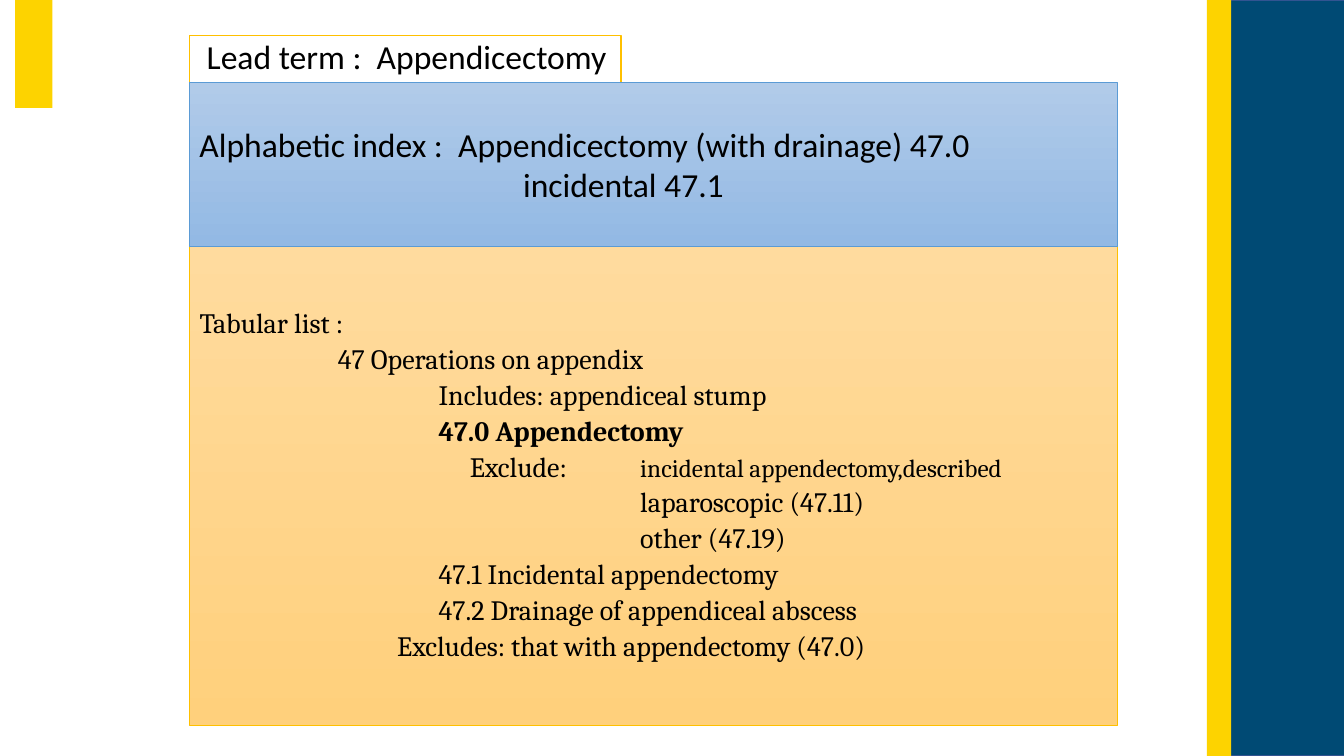
from pptx import Presentation
from pptx.dml.color import RGBColor
from pptx.enum.shapes import MSO_SHAPE
from pptx.enum.text import MSO_ANCHOR, MSO_AUTO_SIZE, PP_ALIGN
from pptx.util import Inches, Pt

RECT = MSO_SHAPE.RECTANGLE
MIDDLE = MSO_ANCHOR.MIDDLE
NO_FIT = MSO_AUTO_SIZE.NONE
LEFT = PP_ALIGN.LEFT

# Content: each line is (left indent in inches, runs); a run is (text, format)
LEAD_TERM = [(0, [("Lead term :  Appendicectomy", {})])]
INDEX = [
    (0, [("Alphabetic index :  Appendicectomy (with drainage) 47.0", {})]),
    (3.21, [("incidental 47.1", {})]),
]
CODE, EXCLUDE, EXCLUDED = 2.37, 2.68, 4.37
TABULAR = [
    (0, [("Tabular list :", {})]),
    (1.37, [("47 Operations on appendix", {})]),
    (CODE, [("Includes: appendiceal stump", {})]),
    (CODE, [("47.0 Appendectomy", {"bold": True})]),
    (EXCLUDE, [("Exclude:\t", {}),
               ("incidental appendectomy,described", {"size": 18})]),
    (EXCLUDED, [("laparoscopic (47.11)", {})]),
    (EXCLUDED, [("other (47.19)", {})]),
    (CODE, [("47.1 Incidental appendectomy", {})]),
    (CODE, [("47.2 Drainage of appendiceal abscess", {})]),
    (1.96, [("Excludes: that with appendectomy (47.0)", {})]),
]

# Bars: left, top, width, height, fill, line
BARS = [
    (0.15, -0.03, 0.37, 1.1, "FDD300", None),
    (12.18, 0, 1.21, 7.5, "004A74", "325491"),
    (11.97, -0.01, 0.24, 7.53, "FDD300", None),
]
PANEL_LEFT, PANEL_WIDTH = 1.88, 9.2
LEAD_TOP, INDEX_TOP, TABULAR_TOP, BOTTOM = 0.35, 0.82, 2.44, 7.2


def rgb(value):
    return RGBColor.from_string(value)


def place(sp, left, top, width, height):
    sp.left, sp.top = Inches(left), Inches(top)
    sp.width, sp.height = Inches(width), Inches(height)


def paint(sp, colors, line=None, weight=1):
    if len(colors) == 1:
        sp.fill.solid()
        sp.fill.fore_color.rgb = rgb(colors[0])
    else:
        sp.fill.gradient()
        sp.fill.gradient_angle = 270
        for stop, color in zip(sp.fill.gradient_stops, colors):
            stop.color.rgb = rgb(color)
    if line:
        sp.line.color.rgb = rgb(line)
        sp.line.width = Pt(weight)
    else:
        sp.line.fill.background()


def write(sp, lines, font="Calibri", size=24, spacing=1.0, before=0,
          inset=0.1, wrap=True):
    tf = sp.text_frame
    tf.auto_size, tf.word_wrap, tf.vertical_anchor = NO_FIT, wrap, MIDDLE
    tf.margin_left, tf.margin_right = Inches(inset), Inches(0.1)
    tf.margin_top = tf.margin_bottom = Inches(0.05)
    for i, (indent, runs) in enumerate(lines):
        p = tf.add_paragraph() if i else tf.paragraphs[0]
        p.alignment, p.line_spacing = LEFT, spacing
        p.space_before = Pt(before if i else 0)
        # A line with a tab hangs, so the tab lands on the excluded column
        margin = EXCLUDED if "\t" in runs[0][0] else indent
        pPr = p._p.get_or_add_pPr()
        pPr.set("marL", str(Inches(margin)))
        pPr.set("indent", str(Inches(indent - margin)))
        pPr.get_or_change_to_buNone() if hasattr(
            pPr, "get_or_change_to_buNone") else pPr.insert_element_before(
            pPr.makeelement(pPr.tag.replace("pPr", "buNone"), {}),
            "a:tabLst", "a:defRPr", "a:extLst")
        for text, style in runs:
            r = p.add_run()
            r.text = text
            r.font.name = font
            r.font.size = Pt(style.get("size", size))
            r.font.bold = style.get("bold", False)
            r.font.color.rgb = rgb("000000")


def add_rect(s, *box):
    sp = s.shapes.add_shape(RECT, *[Inches(v) for v in box])
    sp.shadow.inherit = False
    return sp


prs = Presentation()
prs.slide_width, prs.slide_height = Inches(13.33), Inches(7.5)
s = prs.slides.add_slide(prs.slide_layouts[1])
title, body = s.placeholders[0], s.placeholders[1]

# Side bars
for *box, fill, line in BARS:
    paint(add_rect(s, *box), [fill], line)

# Tabular list
place(body, PANEL_LEFT, TABULAR_TOP, PANEL_WIDTH, BOTTOM - TABULAR_TOP)
paint(body, ["FFDB9E", "FFD07C"], "FFC000", 0.5)
write(body, TABULAR, font="Cambria", size=20, spacing=0.9, before=4)

# Alphabetic index
index = add_rect(s, PANEL_LEFT, INDEX_TOP, PANEL_WIDTH, TABULAR_TOP - INDEX_TOP)
paint(index, ["B1CBE9", "93B9E4"], "5B9BD5", 0.5)
write(index, INDEX)

# Lead term
place(title, PANEL_LEFT, LEAD_TOP, 4.28, INDEX_TOP - LEAD_TOP)
paint(title, ["FFFFFF"], "FFC000")
write(title, LEAD_TERM, spacing=0.9, inset=0.17, wrap=False)

prs.save("out.pptx")
